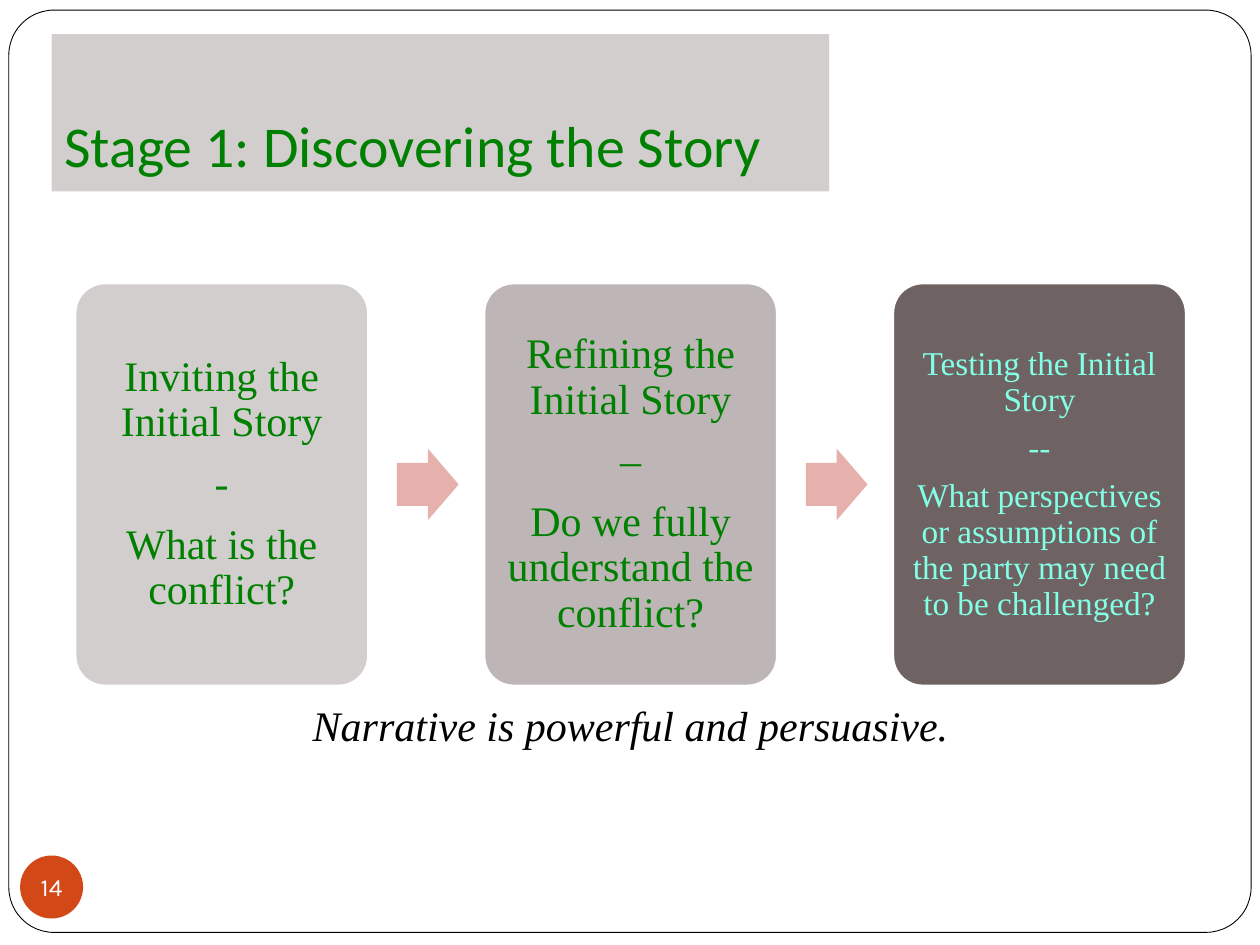
from pptx import Presentation
from pptx.dml.color import RGBColor
from pptx.enum.shapes import MSO_SHAPE
from pptx.enum.text import MSO_ANCHOR, PP_ALIGN
from pptx.util import Inches, Pt

ROUNDED, ARROW, OVAL = MSO_SHAPE.ROUNDED_RECTANGLE, MSO_SHAPE.RIGHT_ARROW, MSO_SHAPE.OVAL
LEFT, CENTER = PP_ALIGN.LEFT, PP_ALIGN.CENTER
MIDDLE, BOTTOM = MSO_ANCHOR.MIDDLE, MSO_ANCHOR.BOTTOM
SERIF = "Times New Roman"
GREEN = "008000"

TITLE = "Stage 1: Discovering the Story"
CLOSING = "Narrative is powerful and persuasive."
PAGE_NUMBER = "14"
# Paragraphs, fill, text colour, size, inset
STEPS = [
    (["Inviting the Initial Story", "-", "What is the conflict?"],
     "D3CECE", GREEN, 24, 0.1),
    (["Refining the Initial Story", "–", "Do we fully understand the conflict?"],
     "BDB5B6", GREEN, 24, 0.08),
    (["Testing the Initial Story", "--",
      "What perspectives or assumptions of the party may need to be challenged?"],
     "6E6263", "83FFE5", 19, 0.08),
]
STEP_LEFT, STEP_TOP, STEP_WIDTH, STEP_HEIGHT = 0.6, 2.25, 2.32, 3.19
STEP_PITCH = 3.245
ARROW_WIDTH, ARROW_HEIGHT, ARROW_GAP = 0.49, 0.57, 0.23


def color(value):
    return RGBColor.from_string(value)


def add_shape(page, kind, place, fill, line=None, line_width=1, adjust=()):
    shape = page.shapes.add_shape(kind, *map(Inches, place))
    shape.shadow.inherit = False
    for index, value in enumerate(adjust):
        shape.adjustments[index] = value
    shape.fill.solid()
    shape.fill.fore_color.rgb = color(fill)
    if line:
        shape.line.color.rgb = color(line)
        shape.line.width = Pt(line_width)
    else:
        shape.line.fill.background()
    return shape


def write(shape, lines, size, font, ink, align=CENTER, anchor=MIDDLE,
          insets=(0.1, 0.05, 0.1, 0.05), wrap=True, italic=False, spacing=None):
    """Fill a shape with paragraphs; insets run left, top, right, bottom."""
    frame = shape.text_frame
    frame.word_wrap = wrap
    frame.vertical_anchor = anchor
    for side, inset in zip(("left", "top", "right", "bottom"), insets):
        setattr(frame, f"margin_{side}", Inches(inset))
    for index, line in enumerate(lines):
        para = frame.add_paragraph() if index else frame.paragraphs[0]
        para.alignment = align
        for name, value in (spacing or {}).items():
            setattr(para, name, value)
        span = para.add_run()
        span.text = line
        style = {"size": Pt(size), "name": font, "italic": italic, "bold": False}
        for name, value in style.items():
            setattr(span.font, name, value)
        span.font.color.rgb = color(ink)


def add_steps(page):
    for index, (lines, fill, ink, size, inset) in enumerate(STEPS):
        left = STEP_LEFT + index * STEP_PITCH
        card = add_shape(page, ROUNDED, (left, STEP_TOP, STEP_WIDTH, STEP_HEIGHT),
                         fill, "FFFFFF", adjust=[0.1])
        write(card, lines, size, SERIF, ink, insets=[inset] * 4,
              spacing={"line_spacing": 0.9, "space_after": Pt(round(size * 0.37))})
        if index < len(STEPS) - 1:
            arrow_top = STEP_TOP + (STEP_HEIGHT - ARROW_HEIGHT) / 2
            add_shape(page, ARROW, (left + STEP_WIDTH + ARROW_GAP, arrow_top,
                                    ARROW_WIDTH, ARROW_HEIGHT),
                      "E6B1AC", adjust=[0.6, 0.5])


def main():
    deck = Presentation()
    deck.slide_width, deck.slide_height = Inches(10), Inches(7.5)
    page = deck.slides.add_slide(deck.slide_layouts[5])

    border = add_shape(page, ROUNDED, (0.07, 0.08, 9.86, 7.32), "FFFFFF",
                       "000000", 0.5, [0.049])
    title = page.shapes.title
    title._element.addprevious(border._element)  # the border lies behind the title
    title.left, title.top, title.width, title.height = map(Inches, (0.41, 0.27, 6.17, 1.25))
    title.fill.solid()
    title.fill.fore_color.rgb = color("D3CECE")
    write(title, [TITLE], 33, "Calibri", GREEN, LEFT, BOTTOM, (0.1, 0.05, 0.1, 0.1))

    add_steps(page)

    closing = page.shapes.add_textbox(*map(Inches, (0.67, 5.5, 8.67, 0.5)))
    write(closing, [CLOSING], 24, SERIF, "000000", anchor=MSO_ANCHOR.TOP, italic=True)

    badge = add_shape(page, OVAL, (0.16, 6.79, 0.5, 0.5), "D34817")
    write(badge, [PAGE_NUMBER], 14, "Karla", "FFFFFF", insets=[0] * 4, wrap=False)

    deck.save("out.pptx")


if __name__ == "__main__":
    main()
